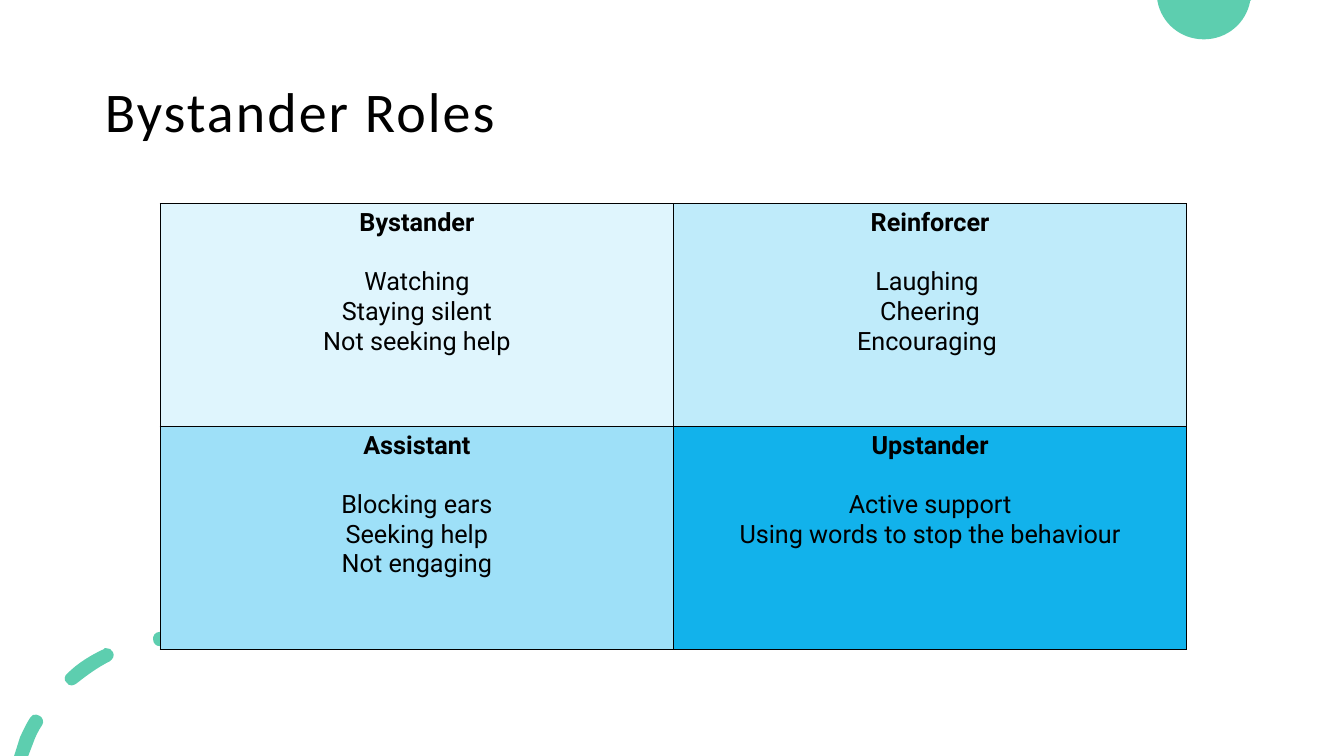
from dataclasses import dataclass

from lxml import etree
from pptx import Presentation
from pptx import util as u
from pptx.dml.color import RGBColor
from pptx.enum import text
from pptx.oxml import ns

BLACK = RGBColor(0x00, 0x00, 0x00)
GREEN = RGBColor(0x5D, 0xCE, 0xAF)
PALE_BLUE = RGBColor(0xDF, 0xF5, 0xFD)
LIGHT_BLUE = RGBColor(0xBF, 0xEB, 0xFA)
SOFT_BLUE = RGBColor(0x9E, 0xE0, 0xF8)
STRONG_BLUE = RGBColor(0x12, 0xB2, 0xEB)

UNITS_PER_INCH = 1000
Point = tuple[float, float]


@dataclass
class Role:
    heading: str
    actions: list[str]
    fill: RGBColor


@dataclass
class Contour:
    start: Point
    segments: list[tuple[Point, ...]]


ROLES = [
    [
        Role("Bystander", ["Watching", "Staying silent", "Not seeking help"], PALE_BLUE),
        Role("Reinforcer", ["Laughing ", "Cheering", "Encouraging "], LIGHT_BLUE),
    ],
    [
        Role("Assistant", ["Blocking ears", "Seeking help", "Not engaging"], SOFT_BLUE),
        Role("Upstander", ["Active support", "Using words to stop the behaviour"], STRONG_BLUE),
    ],
]

TOP_CIRCLE = [
    Contour((11.48, 0), [
        ((12.41, 0),),
        ((12.4, 0.01),),
        ((12.36, 0.23), (12.17, 0.39), (11.94, 0.39)),
        ((11.71, 0.39), (11.52, 0.23), (11.48, 0.01)),
    ]),
]

DASHED_ARC = [
    Contour((0.36, 7.09), [
        ((0.34, 7.08), (0.31, 7.1), (0.3, 7.12)),
        ((0.26, 7.18), (0.23, 7.25), (0.2, 7.31)),
        ((0.14, 7.5),),
        ((0.28, 7.5),),
        ((0.33, 7.37),),
        ((0.35, 7.31), (0.38, 7.25), (0.42, 7.19)),
        ((0.44, 7.16), (0.42, 7.11), (0.39, 7.1)),
        ((0.38, 7.09), (0.37, 7.09), (0.36, 7.09)),
    ]),
    Contour((1.05, 6.43), [
        ((1.04, 6.43), (1.03, 6.43), (1.03, 6.44)),
        ((0.9, 6.5), (0.77, 6.58), (0.67, 6.68)),
        ((0.64, 6.7), (0.63, 6.75), (0.66, 6.77)),
        ((0.67, 6.79), (0.69, 6.8), (0.71, 6.8)),
        ((0.71, 6.8),),
        ((0.73, 6.8), (0.74, 6.79), (0.76, 6.78)),
        ((0.86, 6.7), (0.97, 6.62), (1.09, 6.56)),
        ((1.12, 6.54), (1.14, 6.5), (1.12, 6.47)),
        ((1.11, 6.44), (1.08, 6.43), (1.05, 6.43)),
    ]),
    Contour((1.79, 6.25), [
        ((1.72, 6.25), (1.65, 6.26), (1.58, 6.27)),
        ((1.54, 6.27), (1.51, 6.31), (1.52, 6.35)),
        ((1.52, 6.38), (1.55, 6.41), (1.58, 6.41)),
        ((1.59, 6.41), (1.59, 6.41), (1.59, 6.41)),
        ((1.73, 6.39), (1.86, 6.39), (1.99, 6.4)),
        ((2.03, 6.41), (2.07, 6.38), (2.07, 6.35)),
        ((2.08, 6.31), (2.05, 6.27), (2.01, 6.27)),
        ((2.01, 6.27), (2.01, 6.27), (2.01, 6.27)),
        ((1.94, 6.26), (1.86, 6.25), (1.79, 6.25)),
    ]),
]


def apply_format(target, values: dict) -> None:
    for attribute, value in values.items():
        setattr(target, attribute, value)


def scaled(point: Point) -> Point:
    return round(point[0] * UNITS_PER_INCH), round(point[1] * UNITS_PER_INCH)


def bend_segments(ornament, contours: list[Contour]) -> None:
    left, top = scaled((u.Emu(ornament.left).inches, u.Emu(ornament.top).inches))
    segments = [segment for contour in contours for segment in contour.segments]
    lines = list(ornament._element.iter(ns.qn("a:lnTo")))
    for line, segment in zip(lines, segments):
        if len(segment) == 1:
            continue
        curve = etree.Element(ns.qn("a:cubicBezTo"))
        for point in segment:
            x, y = scaled(point)
            etree.SubElement(curve, ns.qn("a:pt"), x=str(x - left), y=str(y - top))
        line.getparent().replace(line, curve)


def draw_ornament(slide, contours: list[Contour]) -> None:
    builder = slide.shapes.build_freeform(
        *scaled(contours[0].start), scale=u.Inches(1) / UNITS_PER_INCH
    )
    for index, contour in enumerate(contours):
        if index:
            builder.move_to(*scaled(contour.start))
        ends = [scaled(segment[-1]) for segment in contour.segments]
        builder.add_line_segments(ends, close=True)
    ornament = builder.convert_to_shape()
    bend_segments(ornament, contours)
    ornament.shadow.inherit = False
    ornament.fill.solid()
    ornament.fill.fore_color.rgb = GREEN
    ornament.line.fill.background()


def write(paragraph, words: str, font: dict):
    run = paragraph.add_run()
    run.text = words
    apply_format(run.font, font)
    run.font.color.rgb = BLACK
    return run


def draw_title(slide) -> None:
    title = slide.shapes.add_textbox(
        u.Inches(0.92), u.Inches(0.4), u.Inches(11.5), u.Inches(1.45)
    )
    frame = title.text_frame
    apply_format(frame, {
        "word_wrap": True,
        "vertical_anchor": text.MSO_ANCHOR.MIDDLE,
        "margin_left": u.Inches(0.12),
        "margin_top": u.Inches(0.12),
        "margin_right": u.Inches(0.12),
        "margin_bottom": u.Inches(0.1),
    })
    paragraph = frame.paragraphs[0]
    paragraph.line_spacing = 0.9
    run = write(paragraph, "Bystander Roles", {"name": "Calibri", "size": u.Pt(40)})
    run.font._element.set("spc", "150")


def add_borders(cell) -> None:
    properties = cell._tc.get_or_add_tcPr()
    for side in ("lnL", "lnR", "lnT", "lnB"):
        border = etree.SubElement(properties, ns.qn(f"a:{side}"), w=str(u.Pt(1)))
        fill = etree.SubElement(border, ns.qn("a:solidFill"))
        etree.SubElement(fill, ns.qn("a:srgbClr"), val=str(BLACK))


def fill_cell(cell, role: Role) -> None:
    add_borders(cell)
    cell.fill.solid()
    cell.fill.fore_color.rgb = role.fill
    frame = cell.text_frame
    for index, words in enumerate([role.heading, *role.actions]):
        is_heading = index == 0
        paragraph = frame.paragraphs[0] if is_heading else frame.add_paragraph()
        apply_format(paragraph, {
            "alignment": text.PP_ALIGN.CENTER,
            "space_after": u.Pt(21 if is_heading else 0),
        })
        write(paragraph, words, {"name": "Roboto", "size": u.Pt(18), "bold": is_heading})


def draw_roles(slide) -> None:
    table = slide.shapes.add_table(
        len(ROLES), len(ROLES[0]),
        u.Inches(1.59), u.Inches(2.02), u.Inches(10.18), u.Inches(4.42),
    ).table
    apply_format(table, {"first_row": False, "horz_banding": False})
    for row, roles in enumerate(ROLES):
        for column, role in enumerate(roles):
            fill_cell(table.cell(row, column), role)


def main() -> None:
    deck = Presentation()
    apply_format(deck, {"slide_width": u.Inches(13.33), "slide_height": u.Inches(7.5)})
    slide = deck.slides.add_slide(deck.slide_layouts[6])
    for ornament in (TOP_CIRCLE, DASHED_ARC):
        draw_ornament(slide, ornament)
    draw_title(slide)
    draw_roles(slide)
    deck.save("out.pptx")


if __name__ == "__main__":
    main()
